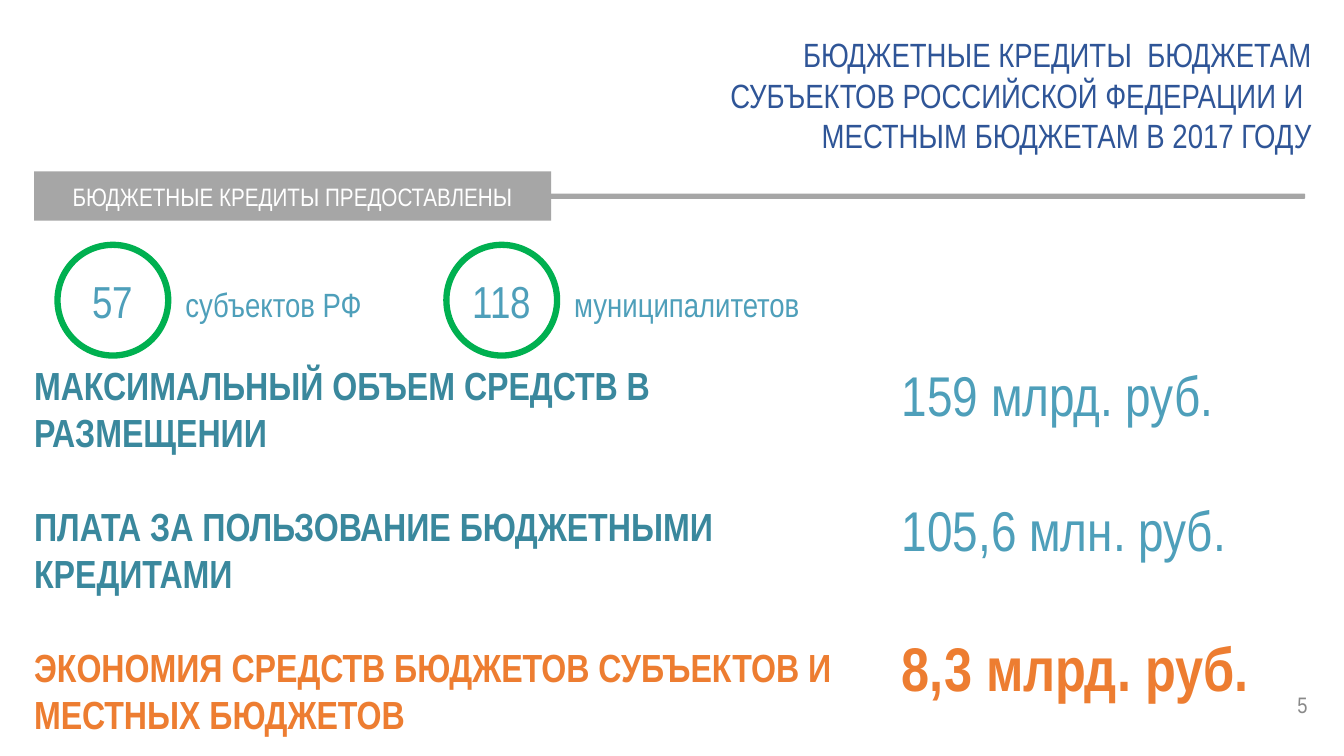
import pptx
import pptx.util
import pptx.dml.color
import pptx.enum.shapes
import pptx.enum.text

Cm, Pt = pptx.util.Cm, pptx.util.Pt
KIND = pptx.enum.shapes.MSO_SHAPE
ALIGN = pptx.enum.text.PP_ALIGN
MID = pptx.enum.text.MSO_ANCHOR.MIDDLE

FONT = "Arial Narrow"
NAVY, GRAY, WHITE, PALE = "2F5597", "A6A6A6", "FFFFFF", "898989"
BLUE, TEAL, ORANGE, GREEN = "4E9FBA", "3A889D", "ED7D31", "00B050"

TITLE = [
    "БЮДЖЕТНЫЕ КРЕДИТЫ  БЮДЖЕТАМ",
    "СУБЪЕКТОВ РОССИЙСКОЙ ФЕДЕРАЦИИ И ",
    "МЕСТНЫМ БЮДЖЕТАМ В 2017 ГОДУ",
]
HEADING = "БЮДЖЕТНЫЕ КРЕДИТЫ ПРЕДОСТАВЛЕНЫ"
COUNTS = [("57", "субъектов РФ"), ("118", "муниципалитетов")]
LABELS = [
    ("МАКСИМАЛЬНЫЙ ОБЪЕМ СРЕДСТВ В РАЗМЕЩЕНИИ", {}),
    ("ПЛАТА ЗА ПОЛЬЗОВАНИЕ БЮДЖЕТНЫМИ КРЕДИТАМИ", {}),
    ("ЭКОНОМИЯ СРЕДСТВ БЮДЖЕТОВ СУБЪЕКТОВ И МЕСТНЫХ БЮДЖЕТОВ",
     {"color": ORANGE}),
]
SUMS = [
    ("159 млрд. руб.", {}),
    ("105,6 млн. руб.", {}),
    ("8,3 млрд. руб.", {"size": 44, "color": ORANGE, "bold": True}),
]
PAGE = "5"


def rgb(code):
    return pptx.dml.color.RGBColor.from_string(code)


def write(shape, lines, size, color, bold=False, align=ALIGN.LEFT, gap=0,
          **frame):
    """Fill a shape with (text, overrides) lines, spaced by gap points."""
    box = shape.text_frame
    for name, value in ({"word_wrap": True} | frame).items():
        setattr(box, name, value)
    for i, (text, extra) in enumerate(lines):
        para = box.paragraphs[0] if i == 0 else box.add_paragraph()
        para.alignment = align
        if i and gap:
            para.space_before = Pt(gap)
        run = para.add_run()
        run.text = text
        look = {"size": size, "color": color, "bold": bold} | extra
        run.font.color.rgb = rgb(look.pop("color"))
        look |= {"name": FONT, "size": Pt(look["size"])}
        for name, value in look.items():
            setattr(run.font, name, value)


def draw(slide, kind, area, fill=None, line=None):
    shape = slide.shapes.add_shape(kind, *map(Cm, area))
    shape.shadow.inherit = False
    if fill:
        shape.fill.solid()
        shape.fill.fore_color.rgb = rgb(fill)
    else:
        shape.fill.background()
    if line:
        shape.line.color.rgb = rgb(line)
        shape.line.width = Pt(4.5)
    else:
        shape.line.fill.background()
    return shape


def label(slide, area, lines, size, color, **look):
    box = slide.shapes.add_textbox(*map(Cm, area))
    write(box, lines, size, color, **look)


def main():
    deck = pptx.Presentation()
    deck.slide_width, deck.slide_height = Cm(33.87), Cm(19.05)
    slide = deck.slides.add_slide(deck.slide_layouts[6])

    label(slide, (11.13, 0.74, 22.17, 3.33), [(t, {}) for t in TITLE],
          24, NAVY, align=ALIGN.RIGHT)

    draw(slide, KIND.ROUNDED_RECTANGLE, (8.48, 4.88, 24.41, 0.13), GRAY)
    band = draw(slide, KIND.RECTANGLE, (0.86, 4.32, 13.03, 1.24), GRAY)
    write(band, [(HEADING, {})], 18, WHITE, align=ALIGN.CENTER,
          vertical_anchor=MID)

    left, top, side, step = 1.45, 6.17, 2.79, 9.8
    for i, (count, unit) in enumerate(COUNTS):
        x = left + i * step
        ring = draw(slide, KIND.OVAL, (x, top, side, side), line=GREEN)
        write(ring, [(count, {})], 32, BLUE, align=ALIGN.CENTER,
              vertical_anchor=MID, margin_left=0, margin_right=0)
        label(slide, (x + 3.22, top + 0.1, 6.5, side), [(unit, {})], 24, BLUE,
              vertical_anchor=MID, margin_left=0)

    label(slide, (0.61, 8.97, 21.92, 9.8), LABELS, 28, TEAL, bold=True,
          gap=33.6)
    label(slide, (22.48, 8.97, 9.96, 9.5), SUMS, 40, BLUE, gap=48)
    label(slide, (32.18, 17.25, 1.02, 1.02), [(PAGE, {})], 16, PALE,
          align=ALIGN.RIGHT, vertical_anchor=MID, margin_left=0)

    deck.save("out.pptx")


if __name__ == "__main__":
    main()
